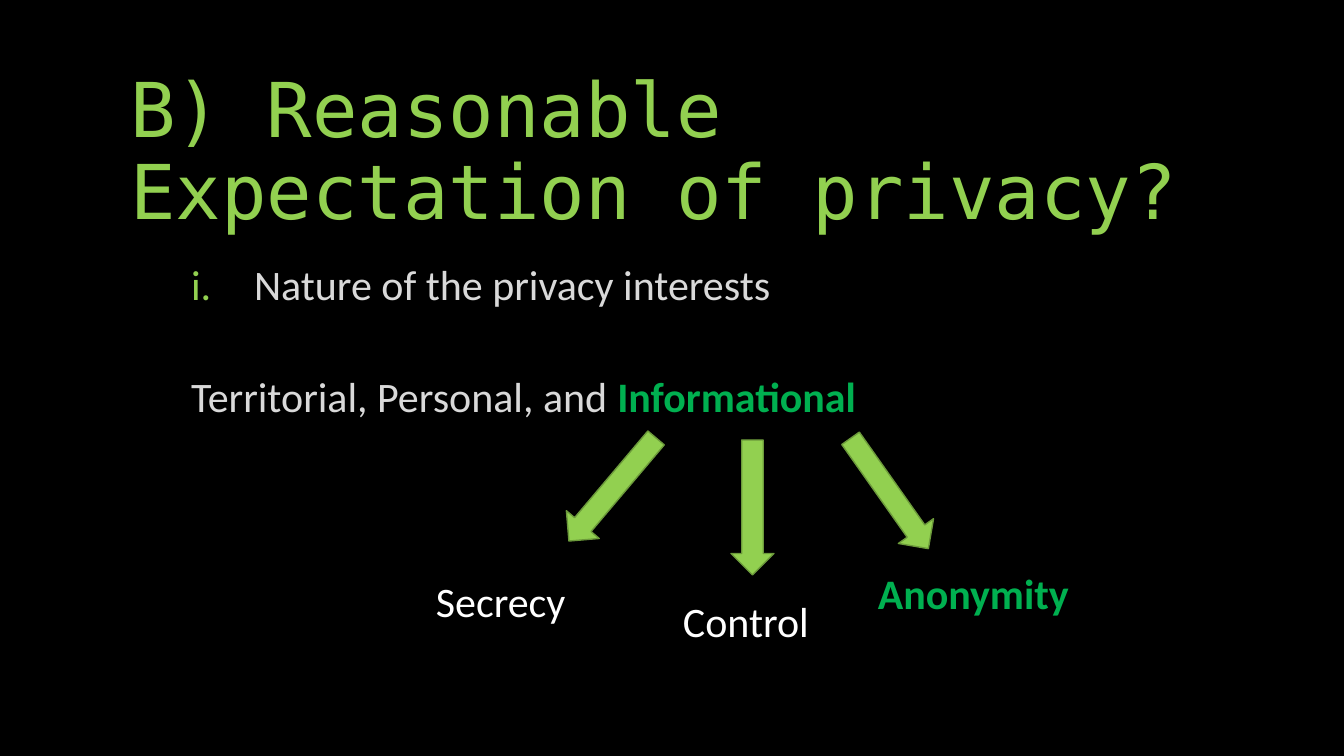
from lxml import etree
from pptx import Presentation
from pptx.dml.color import RGBColor
from pptx.enum.shapes import MSO_SHAPE
from pptx.enum.text import MSO_ANCHOR, MSO_AUTO_SIZE, PP_ALIGN
from pptx.oxml.ns import qn
from pptx.util import Pt

DOWN_ARROW = MSO_SHAPE.DOWN_ARROW
LEFT = PP_ALIGN.LEFT
TOP, BOTTOM = MSO_ANCHOR.TOP, MSO_ANCHOR.BOTTOM
NO_AUTOFIT = MSO_AUTO_SIZE.NONE

BLACK = RGBColor(0x00, 0x00, 0x00)
WHITE = RGBColor(0xFF, 0xFF, 0xFF)
GREY = RGBColor(0xD9, 0xD9, 0xD9)
LIME = RGBColor(0x92, 0xD0, 0x50)
DARK_LIME = RGBColor(0x6C, 0x9A, 0x3B)
GREEN = RGBColor(0x00, 0xB0, 0x50)

TITLE = "B) Reasonable Expectation of privacy?"
NUMBERED_ITEM = "Nature of the privacy interests"
INTERESTS = "Territorial, Personal, and "
KEY_INTEREST = "Informational"

TITLE_BOX = (120, 60, 1104, 181)
BODY_BOX = (105, 259, 1135, 181)
ARROW_SIZE = (43, 135)
LABEL_HEIGHT = 61
# arrow left, arrow top, rotation
ARROWS = [(591, 422, 40.2), (731, 440, 0), (868, 426, 324.8)]
# text, left, top, width, colour, bold
LABELS = [
    ("Secrecy", 426, 571, 166, WHITE, False),
    ("Control", 673, 591, 166, WHITE, False),
    ("Anonymity", 868, 563, 220, GREEN, True),
]


def px(length):
    return round(length * 914400 / 100.8)


def place(shape, box):
    shape.left, shape.top, shape.width, shape.height = map(px, box)


def write(paragraph, text, size=30, font="Calibri", color=WHITE, bold=False):
    run = paragraph.add_run()
    run.text = text
    run.font.size = Pt(size)
    run.font.name = font
    run.font.color.rgb = color
    run.font.bold = bold


def format_item(paragraph, indent, hanging, space_before, number_color=None):
    """Set spacing and indent, with a roman number if a colour is given."""
    paragraph.level = 1
    paragraph.line_spacing = 0.9
    paragraph.space_before = Pt(space_before)
    properties = paragraph._p.get_or_add_pPr()
    properties.set("marL", str(px(indent)))
    properties.set("indent", str(-px(hanging)))
    if number_color is None:
        etree.SubElement(properties, qn("a:buNone"))
        return
    bullet_color = etree.SubElement(properties, qn("a:buClr"))
    etree.SubElement(bullet_color, qn("a:srgbClr"), val=str(number_color))
    etree.SubElement(properties, qn("a:buAutoNum"), type="romanLcPeriod")


def fill_title(title):
    place(title, TITLE_BOX)
    frame = title.text_frame
    frame.auto_size = NO_AUTOFIT
    frame.vertical_anchor = BOTTOM
    paragraph = frame.paragraphs[0]
    paragraph.alignment = LEFT
    paragraph.line_spacing = 0.9
    write(paragraph, TITLE, size=54, font="DejaVu Sans Mono", color=LIME)


def fill_body(body):
    place(body, BODY_BOX)
    frame = body.text_frame
    frame.auto_size = NO_AUTOFIT
    frame.vertical_anchor = TOP
    numbered = frame.paragraphs[0]
    format_item(numbered, 139, 63, 8, number_color=LIME)
    write(numbered, NUMBERED_ITEM, color=GREY)
    interests = frame.add_paragraph()
    format_item(interests, 76, 0, 48)
    write(interests, INTERESTS, color=GREY)
    write(interests, KEY_INTEREST, color=GREEN, bold=True)


def add_arrow(slide, left, top, rotation):
    arrow = slide.shapes.add_shape(DOWN_ARROW, *map(px, (left, top, *ARROW_SIZE)))
    arrow.rotation = rotation
    arrow.shadow.inherit = False
    arrow.fill.solid()
    arrow.fill.fore_color.rgb = LIME
    arrow.line.color.rgb = DARK_LIME
    arrow.line.width = Pt(1)


def add_label(slide, text, left, top, width, color, bold):
    label = slide.shapes.add_textbox(*map(px, (left, top, width, LABEL_HEIGHT)))
    label.text_frame.word_wrap = True
    write(label.text_frame.paragraphs[0], text, color=color, bold=bold)


def main():
    presentation = Presentation()
    presentation.slide_width, presentation.slide_height = px(1344), px(756)
    slide = presentation.slides.add_slide(presentation.slide_layouts[1])
    slide.background.fill.solid()
    slide.background.fill.fore_color.rgb = BLACK
    fill_title(slide.shapes.title)
    fill_body(slide.placeholders[1])
    for arrow in ARROWS:
        add_arrow(slide, *arrow)
    for label in LABELS:
        add_label(slide, *label)
    presentation.save("out.pptx")


if __name__ == "__main__":
    main()
